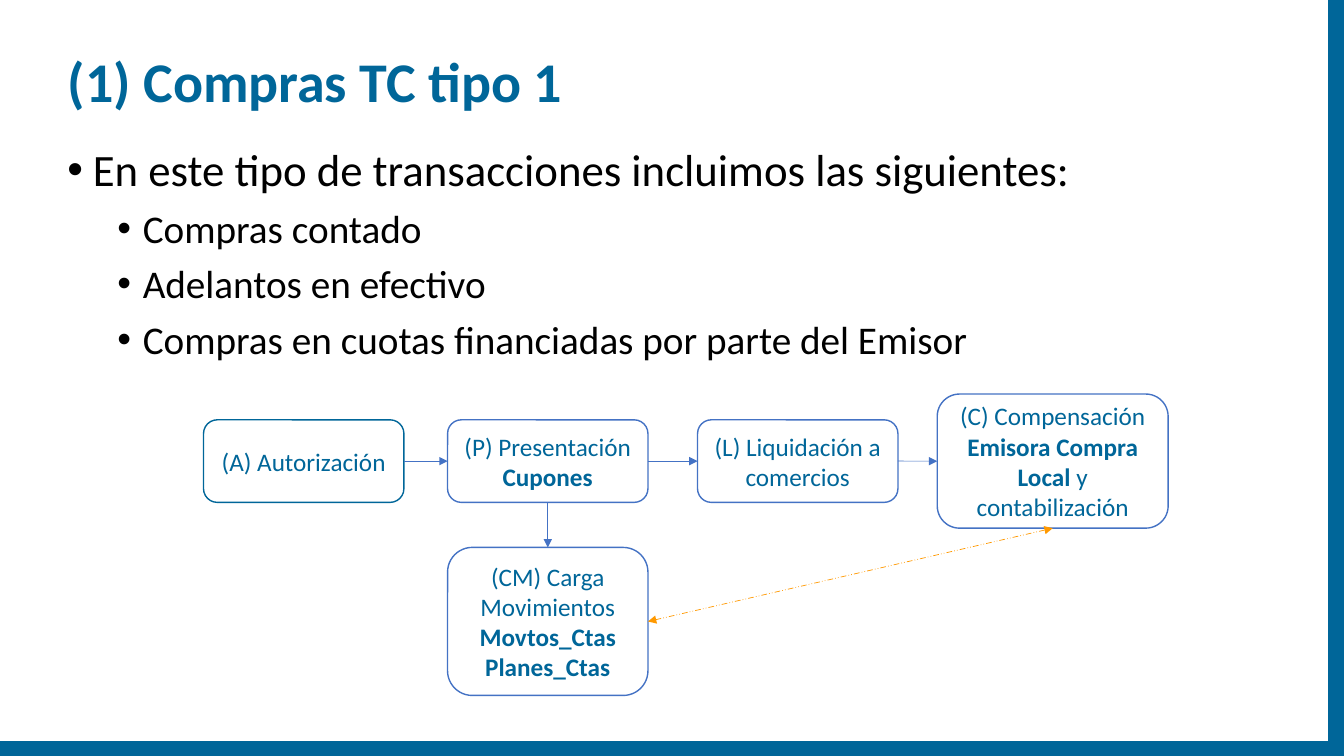
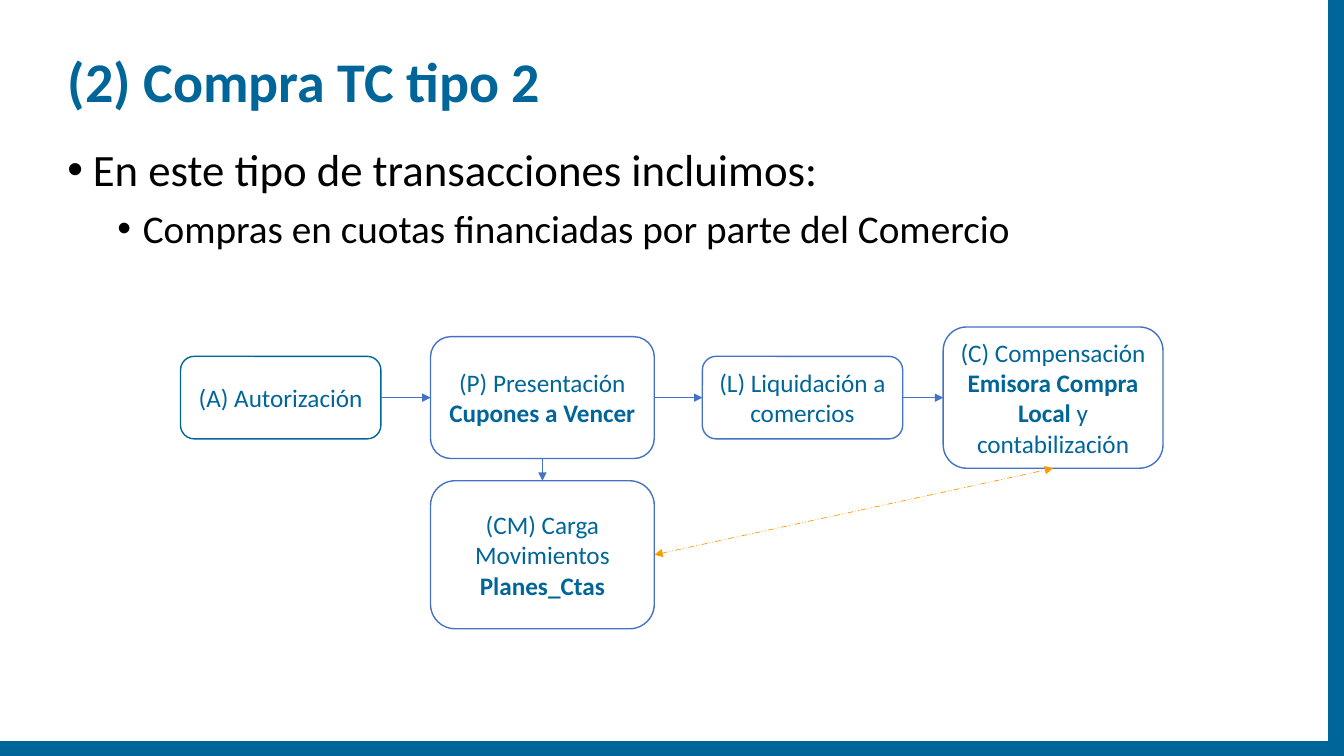
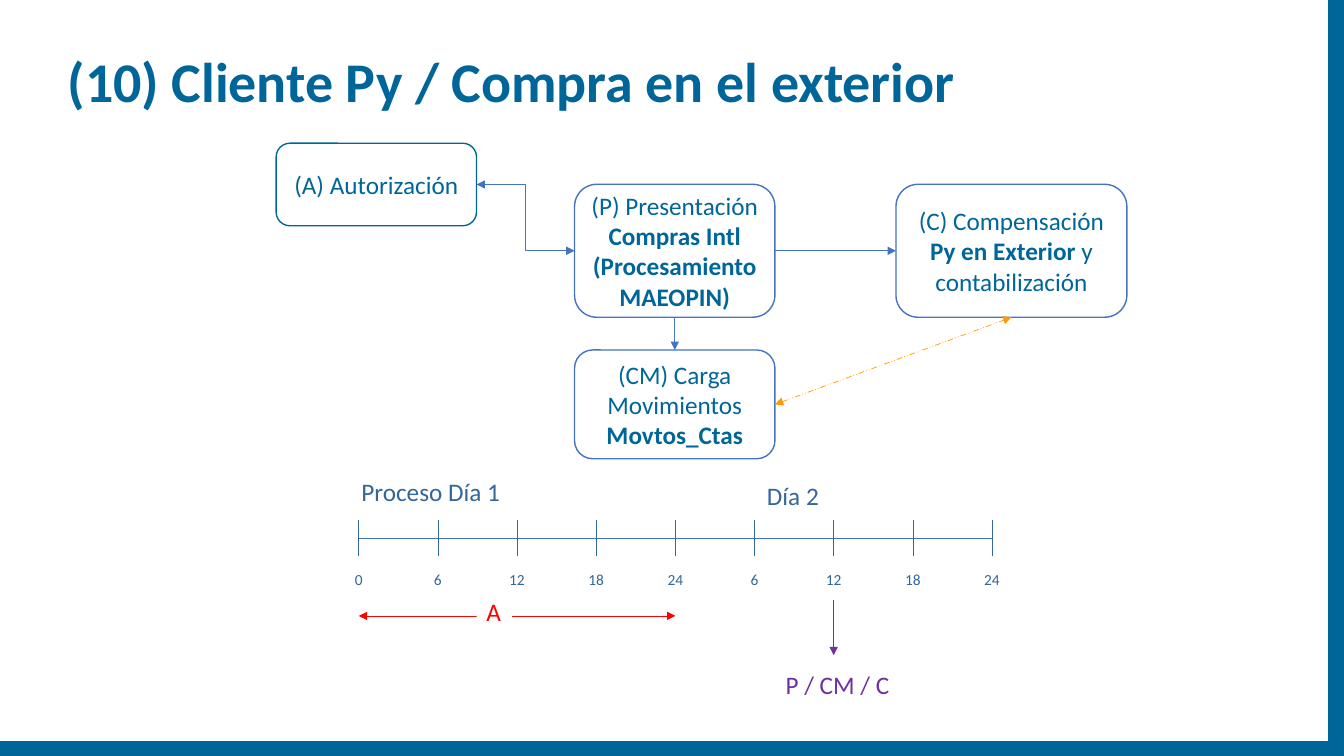
from dataclasses import dataclass

from lxml.etree import SubElement
from pptx import Presentation
from pptx.dml.color import RGBColor
from pptx.enum.dml import MSO_LINE
from pptx.enum.shapes import MSO_CONNECTOR, MSO_SHAPE
from pptx.enum.text import MSO_ANCHOR, PP_ALIGN
from pptx.oxml.ns import qn
from pptx.util import Cm, Pt

PAGE_WIDTH, PAGE_HEIGHT = 33.87, 19.05
TOP, LEFT, BOTTOM, RIGHT = range(4)  # connection sites of a box


@dataclass(frozen=True)
class Theme:
    font: str = "Calibri"
    brand: RGBColor = RGBColor(0x00, 0x66, 0x99)
    outline: RGBColor = RGBColor(0x44, 0x72, 0xC4)
    feedback: RGBColor = RGBColor(0xFF, 0x99, 0x00)
    scale: RGBColor = RGBColor(0x33, 0x66, 0x99)
    authorization: RGBColor = RGBColor(0xFF, 0x00, 0x00)
    processing: RGBColor = RGBColor(0x70, 0x30, 0xA0)
    black: RGBColor = RGBColor(0x00, 0x00, 0x00)
    white: RGBColor = RGBColor(0xFF, 0xFF, 0xFF)
    title_size: int = 40
    intro_size: int = 32
    item_size: int = 28
    text_size: int = 18
    tick_size: int = 11
    box_line: float = 1
    thin_line: float = 0.5


class Sheet:
    """Holds the theme and the current page, and draws on it."""

    def __init__(self, deck, theme):
        self.deck, self.theme, self.page = deck, theme, None

    # Page, shared bands and title
    def add_page(self, title):
        layout = self.deck.slide_layouts.get_by_name("Title Only")
        self.page = self.deck.slides.add_slide(layout)
        if len(self.deck.slides) == 1:
            self.add_bands(layout)
        heading = self.page.shapes.title
        heading.left, heading.top = Cm(1.45), Cm(1.02)
        heading.width, heading.height = Cm(30.07), Cm(2.21)
        frame = heading.text_frame
        frame.text = title
        frame.vertical_anchor = MSO_ANCHOR.MIDDLE
        para = frame.paragraphs[0]
        para.alignment, para.line_spacing = PP_ALIGN.LEFT, 0.9
        self.set_font(para, self.theme.title_size, self.theme.brand, True)

    def add_bands(self, layout):
        """Draw the bands and move them to the layout, for all pages."""
        depth = 0.36
        for left, top, width, height in (
            (0, PAGE_HEIGHT - depth, PAGE_WIDTH, depth),
            (PAGE_WIDTH - depth - 0.02, 0, depth, PAGE_HEIGHT - depth),
        ):
            band = self.add_shape(MSO_SHAPE.RECTANGLE, left, top, width, height,
                                  self.theme.brand)
            band.fill.solid()
            band.fill.fore_color.rgb = self.theme.brand
            layout.shapes.element.append(band.element)

    # Text
    def set_font(self, para, size, color, bold=None):
        font = para.font
        font.name, font.size, font.bold = self.theme.font, Pt(size), bold
        font.color.rgb = color

    def add_bullets(self, intro, items):
        box = self.page.shapes.add_textbox(
            Cm(1.45), Cm(3.45), Cm(32.03), Cm(2.16 + 1.22 * len(items)))
        frame = box.text_frame
        frame.word_wrap = True
        for index, text in enumerate([intro, *items]):
            para = frame.add_paragraph() if index else frame.paragraphs[0]
            para.text = text
            para.level = 1 if index else 0
            para.space_before = Pt(6 if index else 0)
            props = para._p.get_or_add_pPr()
            props.set("marL", str(Cm(1.9 if index else 0.64)))
            props.set("indent", str(-Cm(0.64)))
            SubElement(props, qn("a:buFont")).set("typeface", "Arial")
            SubElement(props, qn("a:buChar")).set("char", "•")
            size = self.theme.item_size if index else self.theme.intro_size
            self.set_font(para, size, self.theme.black)

    def add_label(self, text, left, top, width, height, color, size=None,
                  centered=False, filled=True):
        label = self.page.shapes.add_textbox(
            Cm(left), Cm(top), Cm(width), Cm(height))
        if filled:
            label.fill.solid()
            label.fill.fore_color.rgb = self.theme.white
        frame = label.text_frame
        frame.word_wrap = False
        frame.text = text
        para = frame.paragraphs[0]
        para.alignment = PP_ALIGN.CENTER if centered else PP_ALIGN.LEFT
        self.set_font(para, size or self.theme.text_size, color)

    # Boxes
    def add_shape(self, kind, left, top, width, height, line):
        shape = self.page.shapes.add_shape(
            kind, Cm(left), Cm(top), Cm(width), Cm(height))
        shape.shadow.inherit = False
        shape.fill.background()
        shape.line.color.rgb = line
        shape.line.width = Pt(self.theme.box_line)
        return shape

    def add_box(self, left, middle, paragraphs, width=5.05, height=2.08,
                line=None):
        """Each paragraph is a list of (text, bold) spans."""
        box = self.add_shape(MSO_SHAPE.ROUNDED_RECTANGLE, left,
                             middle - height / 2, width, height,
                             line or self.theme.outline)
        frame = box.text_frame
        frame.word_wrap = True
        frame.vertical_anchor = MSO_ANCHOR.MIDDLE
        for index, spans in enumerate(paragraphs):
            para = frame.add_paragraph() if index else frame.paragraphs[0]
            para.alignment = PP_ALIGN.CENTER
            mixed = len(spans) > 1
            self.set_font(para, self.theme.text_size, self.theme.brand,
                          None if mixed else spans[0][1])
            for text, bold in spans:
                span = para.add_run()
                span.text = text
                if mixed:
                    span.font.bold = bold
        return box

    def add_authorization(self, left, middle):
        return self.add_box(left, middle, [[("(A) Autorización", False)]],
                            line=self.theme.brand)

    # Lines and arrows
    def add_line(self, x1, y1, x2, y2, color, head=False, tail=False,
                 dash=None, kind=MSO_CONNECTOR.STRAIGHT):
        line = self.page.shapes.add_connector(
            kind, Cm(x1), Cm(y1), Cm(x2), Cm(y2))
        line.line.color.rgb = color
        line.line.width = Pt(self.theme.thin_line)
        if dash:
            line.line.dash_style = dash
        stroke = line.element.find(".//" + qn("a:ln"))
        for end, shown in (("a:headEnd", head), ("a:tailEnd", tail)):
            if shown:
                SubElement(stroke, qn(end)).set("type", "triangle")
        SubElement(stroke.getparent(), qn("a:effectLst"))
        return line

    def link(self, source, source_site, target, target_site, color=None,
             **style):
        line = self.add_line(0, 0, 0, 0, color or self.theme.outline,
                             tail=True, **style)
        line.begin_connect(source, source_site)
        line.end_connect(target, target_site)

    def link_feedback(self, load, clearing):
        self.link(load, RIGHT, clearing, BOTTOM, self.theme.feedback,
                  head=True, dash=MSO_LINE.DASH_DOT_DOT)


def add_local_purchase(sheet, title, intro, items, lefts, middle, presented,
                       presented_size, clearing_size, tables, load_middle):
    """Page with bullets and the flow of a local purchase."""
    sheet.add_page(title)
    sheet.add_bullets(intro, items)
    width, height = presented_size
    steps = [
        sheet.add_authorization(lefts[0], middle),
        sheet.add_box(lefts[1], middle,
                      [[("(P) Presentación", False)], [(presented, True)]],
                      width, height),
        sheet.add_box(lefts[2], middle,
                      [[("(L) Liquidación a comercios", False)]]),
        sheet.add_box(lefts[3], middle,
                      [[("(C) Compensación ", False),
                        ("Emisora Compra Local ", True),
                        ("y contabilización", False)]], *clearing_size),
    ]
    load = sheet.add_box(lefts[1], load_middle,
                         [[("(CM) Carga Movimientos", False)],
                          *([(table, True)] for table in tables)],
                         width, 3.73)
    for source, target in zip(steps, steps[1:]):
        sheet.link(source, RIGHT, target, LEFT)
    sheet.link(steps[1], BOTTOM, load, TOP)
    sheet.link_feedback(load, steps[-1])


def add_foreign_purchase(sheet):
    theme = sheet.theme
    sheet.add_page("(10) Cliente Py / Compra en el exterior")

    # Flow
    authorization = sheet.add_authorization(6.96, 4.65)
    presented = sheet.add_box(
        14.48, 6.32, [[("(P) Presentación", False)], [("Compras Intl", True)],
                      [("(Procesamiento MAEOPIN)", True)]], height=3.35)
    clearing = sheet.add_box(
        22.58, 6.32, [[("(C) Compensación", False)],
                      [("Py en Exterior ", True), ("y contabilización", False)]],
        5.82, 3.35)
    load = sheet.add_box(
        14.48, 10.19, [[("(CM) Carga Movimientos", False)],
                       [("Movtos_Ctas", True)]], height=2.74)
    sheet.link(authorization, RIGHT, presented, LEFT, head=True,
               kind=MSO_CONNECTOR.ELBOW)
    sheet.link(presented, RIGHT, clearing, LEFT)
    sheet.link(presented, BOTTOM, load, TOP)
    sheet.link_feedback(load, clearing)

    # Two-day time scale
    start, end, axis = 9.04, 25.0, 13.56
    hours = (0, 6, 12, 18, 24, 6, 12, 18, 24)
    step = (end - start) / (len(hours) - 1)
    sheet.add_line(start, axis, end, axis, theme.outline)
    for index, hour in enumerate(hours):
        tick = start + index * step
        sheet.add_line(tick, axis - 0.46, tick, axis + 0.46, theme.scale)
        sheet.add_label(str(hour), tick - 0.45, axis + 0.69, 0.9, 0.74,
                        theme.scale, theme.tick_size, True, False)
    sheet.add_label("Proceso Día 1", 8.86, 11.89, 4.04, 1.02, theme.scale)
    sheet.add_label("Día 2", 19.08, 11.99, 1.83, 1.02, theme.scale)

    # Stages on the scale
    sheet.add_line(start, 15.52, start + 4 * step, 15.52, theme.authorization,
                   head=True, tail=True)
    sheet.add_label("A", 12.01, 14.91, 0.89, 1.02, theme.authorization)
    noon = start + 6 * step
    sheet.add_line(noon, 15.11, noon, 16.51, theme.processing, tail=True)
    sheet.add_label("P / CM / C", 19.55, 16.74, 3.16, 1.02, theme.processing)


def main():
    deck = Presentation()
    deck.slide_width, deck.slide_height = Cm(PAGE_WIDTH), Cm(PAGE_HEIGHT)
    sheet = Sheet(deck, Theme())
    add_local_purchase(
        sheet, "(1) Compras TC tipo 1",
        "En este tipo de transacciones incluimos las siguientes:",
        ["Compras contado", "Adelantos en efectivo",
         "Compras en cuotas financiadas por parte del Emisor"],
        lefts=(5.13, 11.28, 17.58, 23.62), middle=11.62,
        presented="Cupones", presented_size=(5.05, 2.08),
        clearing_size=(5.82, 3.38), tables=["Movtos_Ctas", "Planes_Ctas"],
        load_middle=15.66)
    add_local_purchase(
        sheet, "(2) Compra TC tipo 2",
        "En este tipo de transacciones incluimos:",
        ["Compras en cuotas financiadas por parte del Comercio"],
        lefts=(4.55, 10.85, 17.7, 23.77), middle=10.02,
        presented="Cupones a Vencer", presented_size=(5.64, 3.07),
        clearing_size=(5.54, 3.56), tables=["Planes_Ctas"],
        load_middle=13.98)
    add_foreign_purchase(sheet)
    deck.save("out.pptx")


if __name__ == "__main__":
    main()
